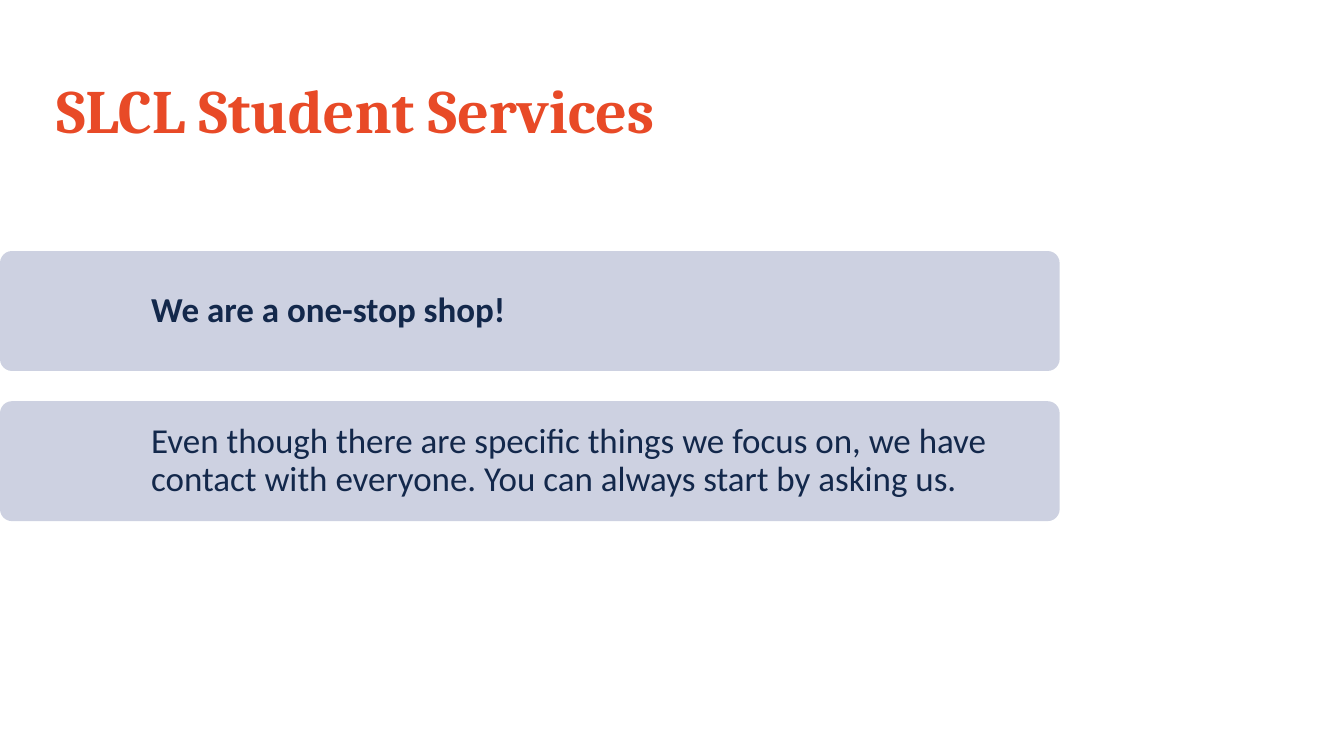
import dataclasses

import pptx
import pptx.dml.color
import pptx.enum.shapes
import pptx.enum.text
import pptx.util

ORANGE = pptx.dml.color.RGBColor(0xE8, 0x4A, 0x27)
NAVY = pptx.dml.color.RGBColor(0x13, 0x28, 0x4B)
PALE_BLUE = pptx.dml.color.RGBColor(0xCD, 0xD1, 0xE1)

SLIDE_WIDTH, SLIDE_HEIGHT = 13.33, 7.5
CONTENT_WIDTH = 10.51
BAND_TOP, BAND_HEIGHT, BAND_PITCH = 2.49, 1.19, 1.49
MESSAGE_LEFT = 1.37
MESSAGE_INSET = 0.13


@dataclasses.dataclass(frozen=True)
class Box:
    """A rectangle in inches."""
    left: float
    top: float
    width: float
    height: float

    def emu(self) -> list[int]:
        return [pptx.util.Inches(length) for length in dataclasses.astuple(self)]


@dataclasses.dataclass(frozen=True)
class TextStyle:
    font: str
    size: float
    color: pptx.dml.color.RGBColor
    bold: bool = False


@dataclasses.dataclass(frozen=True)
class Message:
    text: str
    bold: bool = False


MESSAGES = [
    Message("We are a one-stop shop!", bold=True),
    Message("Even though there are specific things we focus on, we have contact "
            "with everyone. You can always start by asking us."),
]


def add_text(slide, box: Box, text: str, style: TextStyle, inset: float | None = None) -> None:
    """Add wrapped, vertically centred text; inset replaces the default margins."""
    frame = slide.shapes.add_textbox(*box.emu()).text_frame
    frame.word_wrap = True
    frame.vertical_anchor = pptx.enum.text.MSO_ANCHOR.MIDDLE
    if inset is not None:
        frame.margin_left = frame.margin_right = pptx.util.Inches(inset)
        frame.margin_top = frame.margin_bottom = pptx.util.Inches(inset)
    paragraph = frame.paragraphs[0]
    paragraph.text = text
    paragraph.line_spacing = 0.9
    paragraph.font.name = style.font
    paragraph.font.size = pptx.util.Pt(style.size)
    paragraph.font.bold = style.bold
    paragraph.font.color.rgb = style.color


def add_band(slide, box: Box) -> None:
    band = slide.shapes.add_shape(
        pptx.enum.shapes.MSO_SHAPE.ROUNDED_RECTANGLE, *box.emu())
    band.adjustments[0] = 0.1
    band.shadow.inherit = False
    band.fill.solid()
    band.fill.fore_color.rgb = PALE_BLUE
    band.line.fill.background()


def main() -> None:
    presentation = pptx.Presentation()
    presentation.slide_width = pptx.util.Inches(SLIDE_WIDTH)
    presentation.slide_height = pptx.util.Inches(SLIDE_HEIGHT)
    slide = presentation.slides.add_slide(presentation.slide_layouts[6])

    add_text(slide, Box(0.46, 0.4, CONTENT_WIDTH, 1.45), "SLCL Student Services",
             TextStyle("Cambria", 44, ORANGE, bold=True))

    for row, message in enumerate(MESSAGES):
        top = BAND_TOP + row * BAND_PITCH
        add_band(slide, Box(0, top, CONTENT_WIDTH, BAND_HEIGHT))
        add_text(slide, Box(MESSAGE_LEFT, top, CONTENT_WIDTH - MESSAGE_LEFT, BAND_HEIGHT),
                 message.text, TextStyle("Calibri", 25, NAVY, message.bold), MESSAGE_INSET)

    presentation.save("out.pptx")


if __name__ == "__main__":
    main()
